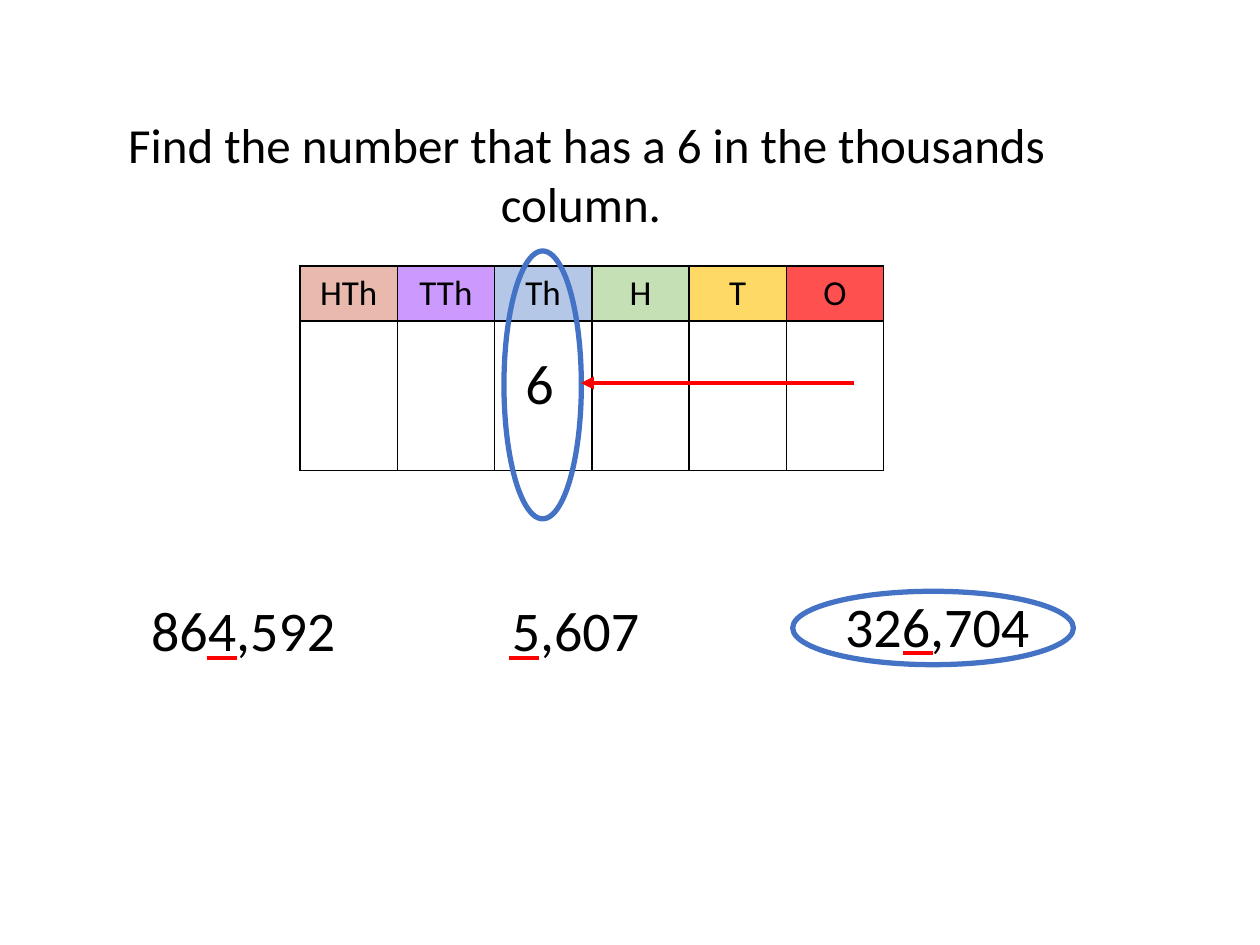
from lxml.etree import SubElement
from pptx import Presentation
from pptx.dml.color import RGBColor
from pptx.enum.shapes import MSO_CONNECTOR, MSO_SHAPE
from pptx.enum.text import MSO_ANCHOR, PP_ALIGN
from pptx.oxml.ns import qn
from pptx.util import Cm, Pt

THEME = {
    "font": "Calibri",
    "text": "000000", "border": "000000", "ring": "4472C4", "mark": "FF0000",
    "question_size": 28, "number_size": 32, "heading_size": 20,
    "ring_width": 3, "underline_width": 2.25, "arrow_width": 2.5, "border_width": 1,
}

QUESTION = "Find the number that has a 6 in the thousands column. "
DIGIT = "6"
COLUMNS = [("HTh", "E8B9AC"), ("TTh", "CC99FF"), ("Th", "B4C7E7"),
           ("H", "C5E0B4"), ("T", "FFD966"), ("O", "FF5050")]
# Number, left and top of its box, left end of the thousands underline
NUMBERS = [("864,592", 1.73, 11.89, 4.17),
           ("5,607", 8.43, 11.89, 10.26),
           ("326,704", 15.72, 11.79, 18.2)]

TABLE_LEFT, TABLE_TOP = 6.05, 5.36
COLUMN_WIDTH = 1.96
ROW_HEIGHTS = (1.11, 3.01)
NUMBER_WIDTH, NUMBER_HEIGHT = 6.35, 1.62
UNDERLINE_DROP, UNDERLINE_LENGTH = 1.38, 0.6
COLUMN_RING = (10.16, 5.06, 1.56, 5.4)
ANSWER_RING = (15.98, 11.92, 5.66, 1.48)
ARROW_START, ARROW_END, ARROW_Y = 17.22, 11.71, 7.72


def color(name):
    return RGBColor.from_string(THEME[name])


def style_paragraph(paragraph, size):
    paragraph.alignment = PP_ALIGN.CENTER
    paragraph.font.name = THEME["font"]
    paragraph.font.size = Pt(THEME[size])
    paragraph.font.color.rgb = color("text")


def add_text(slide, text, size, *box):
    frame = slide.shapes.add_textbox(*map(Cm, box)).text_frame
    frame.word_wrap = True
    paragraph = frame.paragraphs[0]
    paragraph.text = text
    style_paragraph(paragraph, size)


def add_ring(slide, *box):
    ring = slide.shapes.add_shape(MSO_SHAPE.OVAL, *map(Cm, box))
    ring.shadow.inherit = False
    ring.fill.background()
    ring.line.color.rgb = color("ring")
    ring.line.width = Pt(THEME["ring_width"])


def add_horizontal_line(slide, start, end, y, width, arrow=False):
    line = slide.shapes.add_connector(
        MSO_CONNECTOR.STRAIGHT, Cm(start), Cm(y), Cm(end), Cm(y))
    line.line.color.rgb = color("mark")
    line.line.width = Pt(THEME[width])
    if arrow:
        SubElement(line.line._get_or_add_ln(), qn("a:tailEnd"), type="triangle")
    SubElement(line._element.spPr, qn("a:effectLst"))


def add_borders(cell):
    """Draw all four cell borders; they must precede the fill in the XML."""
    properties = cell._tc.get_or_add_tcPr()
    for side in ("a:lnL", "a:lnR", "a:lnT", "a:lnB"):
        border = SubElement(properties, qn(side), w=str(Pt(THEME["border_width"])))
        fill = SubElement(border, qn("a:solidFill"))
        SubElement(fill, qn("a:srgbClr"), val=THEME["border"])


def add_place_value_table(slide):
    table = slide.shapes.add_table(
        len(ROW_HEIGHTS), len(COLUMNS), Cm(TABLE_LEFT), Cm(TABLE_TOP),
        Cm(COLUMN_WIDTH * len(COLUMNS)), Cm(sum(ROW_HEIGHTS))).table
    table.first_row = table.horz_banding = False
    for row, height in zip(table.rows, ROW_HEIGHTS):
        row.height = Cm(height)
    for index, (heading, fill) in enumerate(COLUMNS):
        table.columns[index].width = Cm(COLUMN_WIDTH)
        header, body = table.cell(0, index), table.cell(1, index)
        header.text = heading
        for cell in (header, body):
            add_borders(cell)
            cell.vertical_anchor = MSO_ANCHOR.MIDDLE
            style_paragraph(cell.text_frame.paragraphs[0], "heading_size")
        header.fill.solid()
        header.fill.fore_color.rgb = RGBColor.from_string(fill)
        body.fill.background()


def main():
    presentation = Presentation()
    presentation.slide_width, presentation.slide_height = Cm(25.4), Cm(19.05)
    slide = presentation.slides.add_slide(presentation.slide_layouts[6])

    add_text(slide, QUESTION, "question_size", 0.89, 2.18, 21.87, 2.64)
    add_place_value_table(slide)
    add_ring(slide, *COLUMN_RING)
    add_text(slide, DIGIT, "number_size", 9.65, 6.91, 2.46, NUMBER_HEIGHT)
    for number, left, top, underline in NUMBERS:
        add_text(slide, number, "number_size", left, top, NUMBER_WIDTH, NUMBER_HEIGHT)
        add_horizontal_line(slide, underline, underline + UNDERLINE_LENGTH,
                            top + UNDERLINE_DROP, "underline_width")
    add_ring(slide, *ANSWER_RING)
    add_horizontal_line(slide, ARROW_START, ARROW_END, ARROW_Y, "arrow_width", arrow=True)

    presentation.save("out.pptx")


if __name__ == "__main__":
    main()
